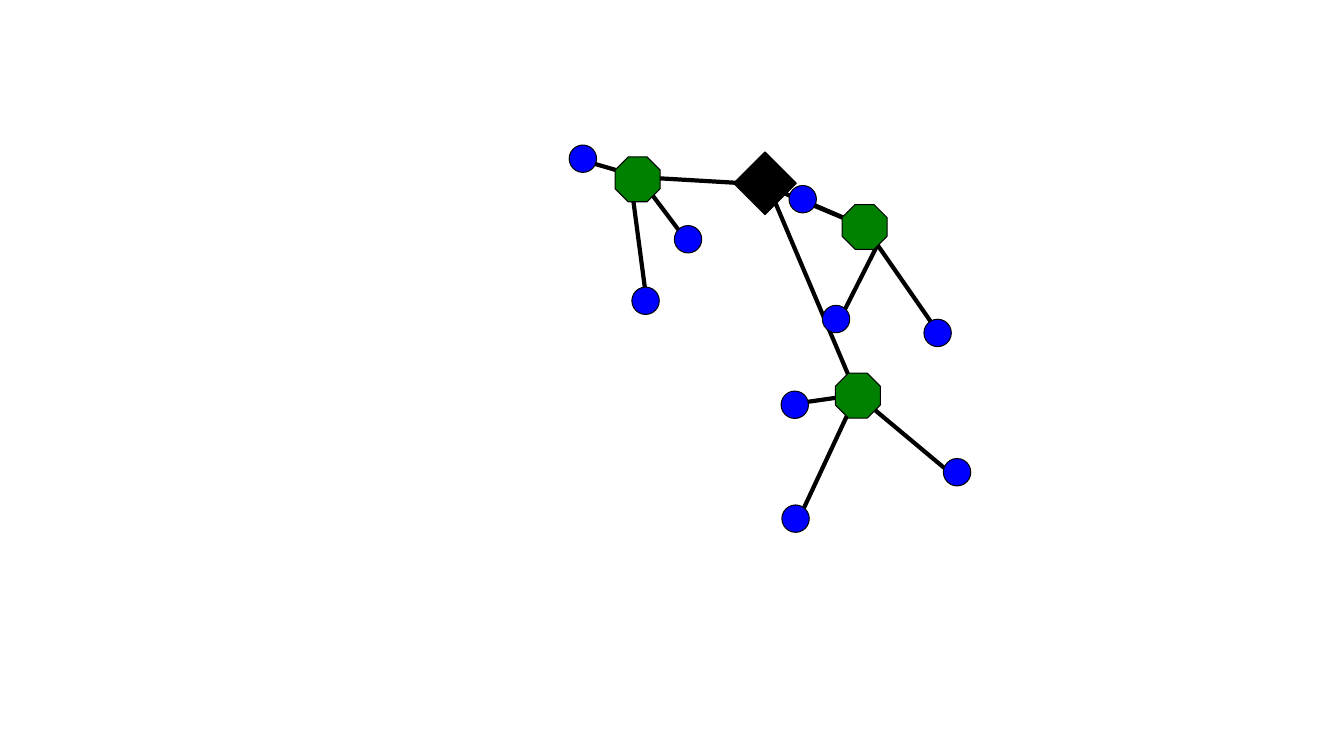
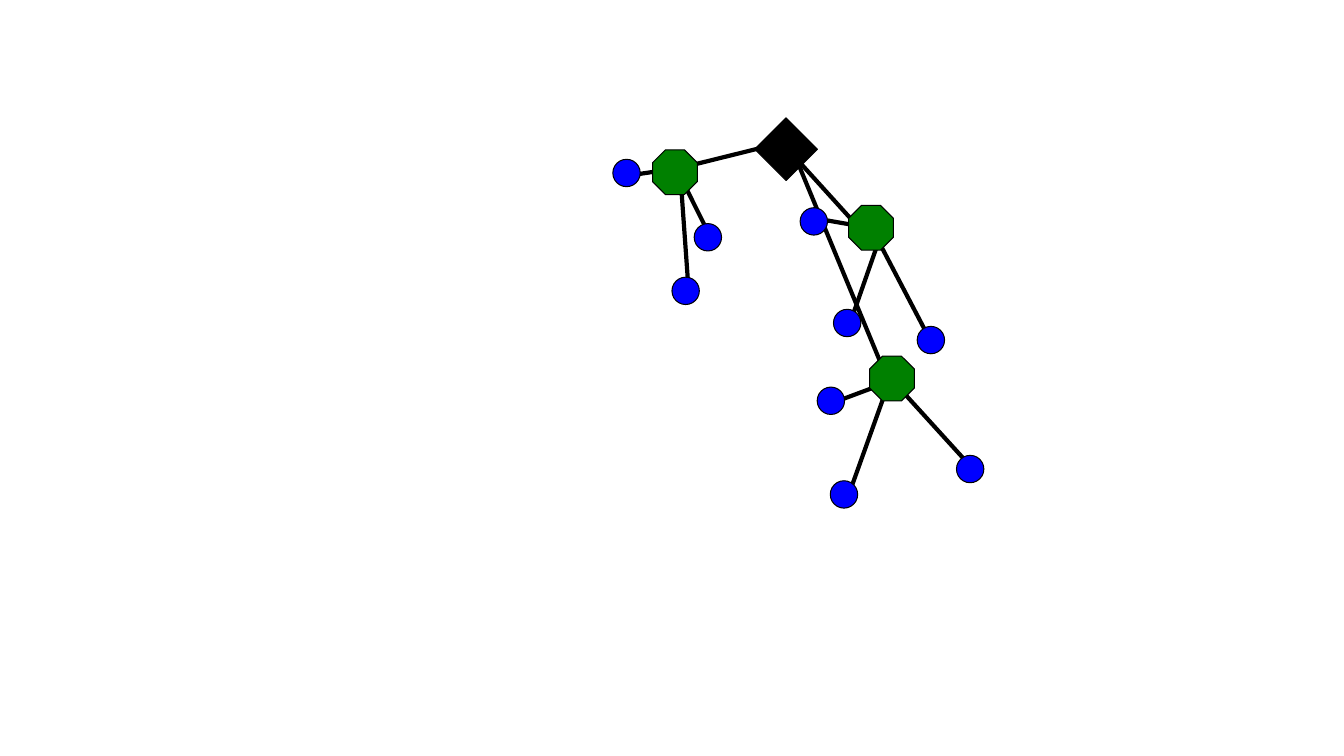
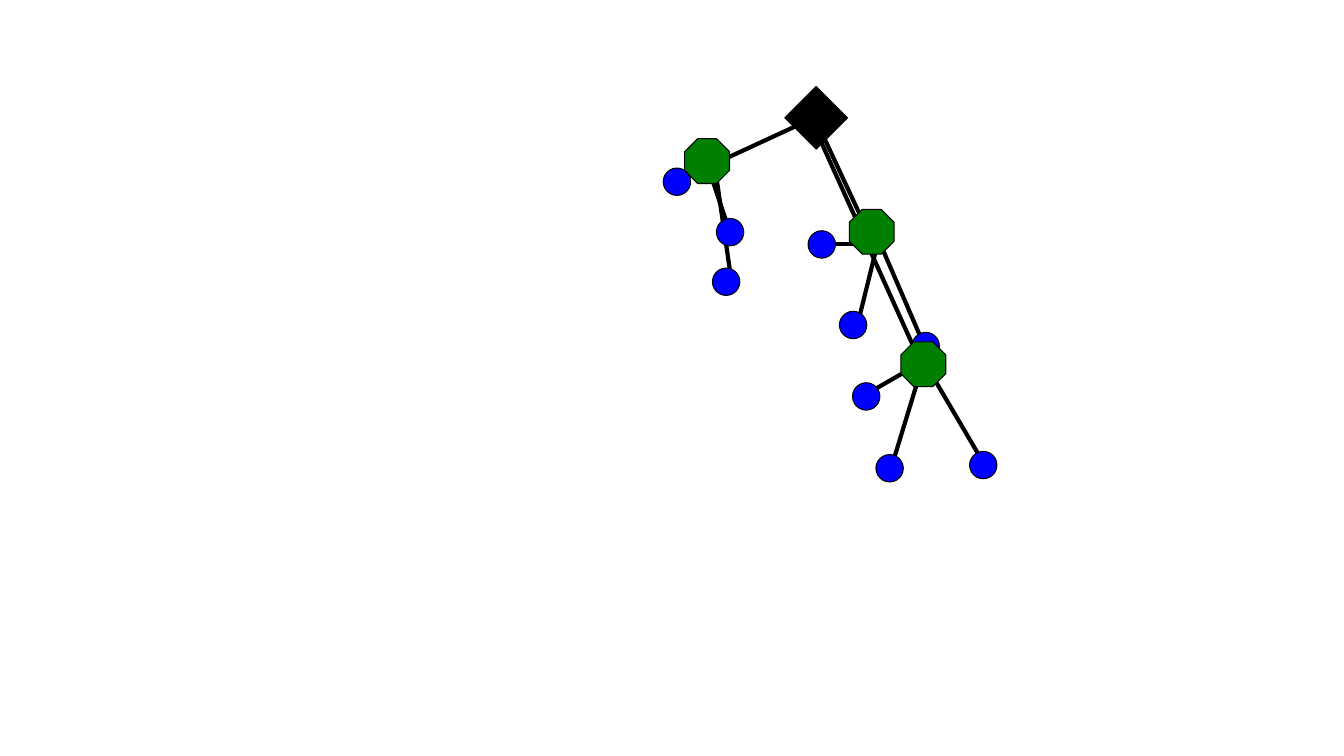
from lxml import etree
from pptx import Presentation
from pptx.dml.color import RGBColor
from pptx.enum.shapes import MSO_CONNECTOR, MSO_SHAPE
from pptx.oxml.ns import qn
from pptx.util import Cm, Pt

STRAIGHT = MSO_CONNECTOR.STRAIGHT
DIAMOND = MSO_SHAPE.DIAMOND
OCTAGON = MSO_SHAPE.OCTAGON
CIRCLE = MSO_SHAPE.FLOWCHART_CONNECTOR

BLACK = RGBColor(0x00, 0x00, 0x00)
GREEN = RGBColor(0x00, 0x80, 0x00)
BLUE = RGBColor(0x00, 0x00, 0xFF)

STYLES = {
    "root": (DIAMOND, 1.58, BLACK),
    "hub": (OCTAGON, 1.13, GREEN),
    "leaf": (CIRCLE, 0.69, BLUE),
}
OCTAGON_CUT = 0.29

STACK = [
    ("leaf", "west low"),
    ("root", "root"),
    ("leaf", "south left"),
    ("leaf", "south low"),
    ("leaf", "south right"),
    ("leaf", "east right"),
    ("hub", "south"),
    ("hub", "east"),
    ("hub", "west"),
    ("leaf", "west right"),
    ("leaf", "west left"),
    ("leaf", "east left"),
    ("leaf", "east low"),
]

FRAMES = [
    {
        "centers": {
            "root": (19.28, 4.62),
            "west": (16.07, 4.52),
            "west left": (14.69, 4.0),
            "west right": (17.34, 6.03),
            "west low": (16.27, 7.58),
            "east": (21.79, 5.72),
            "east left": (20.23, 5.02),
            "east low": (21.07, 8.04),
            "east right": (23.63, 8.39),
            "south": (21.62, 9.97),
            "south left": (20.03, 10.2),
            "south low": (20.05, 13.07),
            "south right": (24.12, 11.9),
        },
        "links": [
            ((20.32, 5.08), (21.8, 5.72)),
            ((22.1, 6.2), (21.17, 8.04)),
            ((21.8, 5.72), (23.71, 8.47)),
            ((20.11, 10.16), (21.59, 9.95)),
            ((21.59, 9.95), (20.11, 13.12)),
            ((21.59, 9.95), (24.13, 12.07)),
            ((14.61, 4.02), (16.09, 4.45)),
            ((16.09, 4.45), (17.36, 6.14)),
            ((15.88, 4.45), (16.3, 7.62)),
            ((15.88, 4.45), (19.47, 4.66)),
            ((21.8, 5.72), (19.26, 4.66)),
            ((21.59, 9.95), (19.26, 4.45)),
        ],
    },
    {
        "centers": {
            "root": (19.81, 3.76),
            "west": (17.01, 4.34),
            "west left": (15.79, 4.36),
            "west right": (17.84, 5.98),
            "west low": (17.28, 7.33),
            "east": (21.95, 5.74),
            "east left": (20.51, 5.58),
            "east low": (21.35, 8.14),
            "east right": (23.46, 8.57),
            "south": (22.48, 9.54),
            "south left": (20.94, 10.1),
            "south low": (21.27, 12.46),
            "south right": (24.45, 11.82),
        },
        "links": [
            ((20.53, 5.5), (21.8, 5.72)),
            ((22.1, 6.2), (21.38, 8.26)),
            ((22.23, 6.25), (23.5, 8.68)),
            ((20.96, 10.16), (22.65, 9.53)),
            ((22.44, 9.53), (21.38, 12.49)),
            ((22.44, 9.53), (24.55, 11.85)),
            ((15.66, 4.45), (17.15, 4.23)),
            ((16.93, 4.02), (17.99, 6.14)),
            ((17.15, 4.45), (17.36, 7.41)),
            ((19.69, 3.6), (17.15, 4.23)),
            ((22.01, 6.14), (19.9, 3.81)),
            ((22.44, 9.74), (19.9, 3.6)),
        ],
    },
    {
        "centers": {
            "root": (20.57, 2.97),
            "west": (17.82, 4.06),
            "west left": (17.06, 4.58),
            "west right": (18.4, 5.85),
            "west low": (18.3, 7.1),
            "east": (21.97, 5.84),
            "east left": (20.71, 6.16),
            "east low": (21.5, 8.19),
            "east right": (23.33, 8.72),
            "south": (23.27, 9.18),
            "south left": (21.83, 9.99),
            "south low": (22.42, 11.8),
            "south right": (24.78, 11.72),
        },
        "links": [
            ((20.74, 6.14), (22.1, 6.14)),
            ((22.1, 6.2), (21.59, 8.26)),
            ((22.23, 6.25), (23.28, 8.68)),
            ((21.8, 9.95), (23.28, 9.1)),
            ((23.28, 9.1), (22.44, 11.85)),
            ((23.28, 9.1), (24.77, 11.64)),
            ((17.15, 4.66), (17.78, 4.02)),
            ((17.78, 4.02), (18.42, 5.93)),
            ((17.99, 4.02), (18.42, 6.99)),
            ((17.78, 4.23), (20.53, 2.96)),
            ((22.01, 6.14), (20.53, 2.96)),
            ((23.28, 9.31), (20.32, 2.75)),
        ],
    },
]


def draw_link(slide, start, end):
    link = slide.shapes.add_connector(
        STRAIGHT, *(Cm(value) for value in start + end))
    link.line.color.rgb = BLACK
    link.line.width = Pt(3)
    etree.SubElement(link._element.spPr, qn("a:effectLst"))


def draw_node(slide, role, center):
    outline, size, color = STYLES[role]
    left, top = (Cm(value - size / 2) for value in center)
    node = slide.shapes.add_shape(outline, left, top, Cm(size), Cm(size))
    if role == "hub":
        node.adjustments[0] = OCTAGON_CUT
    node.shadow.inherit = False
    node.fill.solid()
    node.fill.fore_color.rgb = color
    node.line.color.rgb = BLACK
    node.line.width = Pt(0.75)


def main():
    deck = Presentation()
    deck.slide_width, deck.slide_height = Cm(33.87), Cm(19.05)
    blank_layout = deck.slide_layouts[6]
    for frame in FRAMES:
        slide = deck.slides.add_slide(blank_layout)
        for start, end in frame["links"]:
            draw_link(slide, start, end)
        for role, place in STACK:
            draw_node(slide, role, frame["centers"][place])
    deck.save("out.pptx")


if __name__ == "__main__":
    main()
